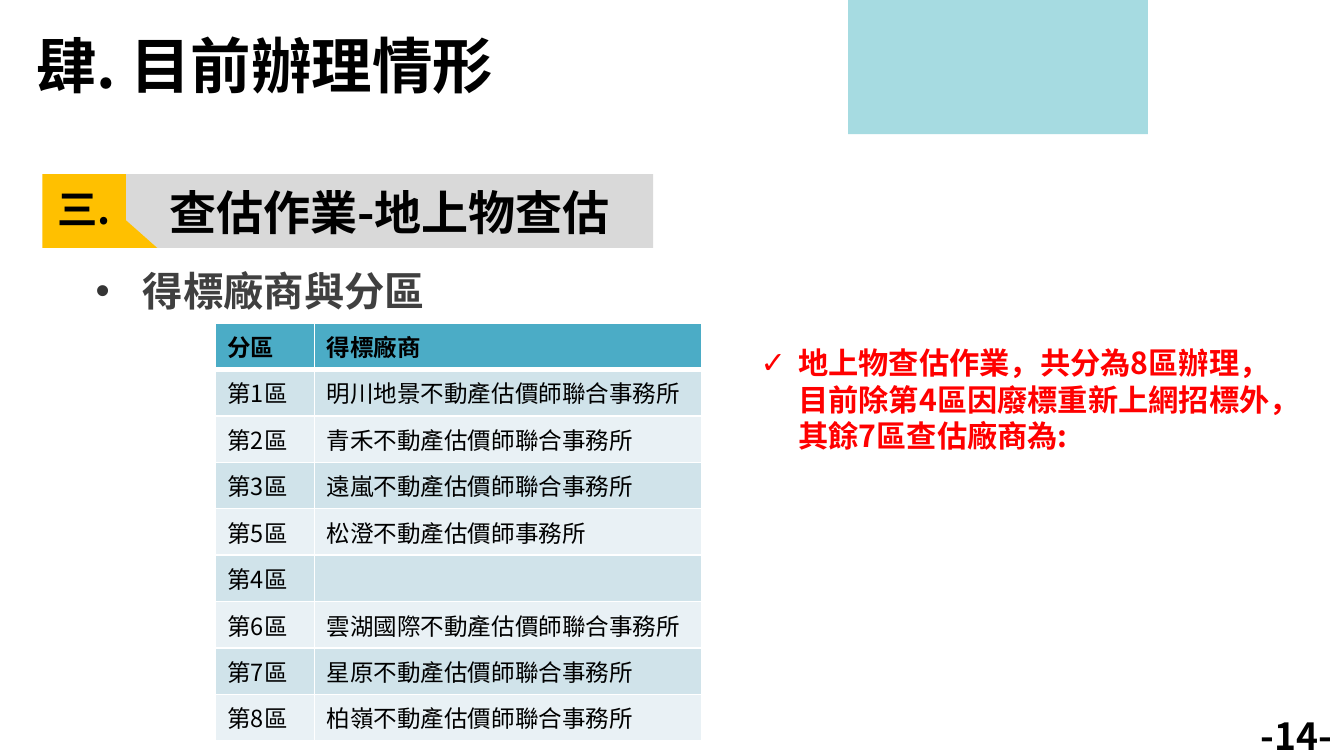
from lxml.etree import SubElement
from pptx import Presentation
from pptx.dml.color import RGBColor
from pptx.enum.shapes import MSO_SHAPE
from pptx.enum.text import MSO_ANCHOR, MSO_AUTO_SIZE, PP_ALIGN
from pptx.oxml.ns import qn
from pptx.util import Inches, Pt

RECT = MSO_SHAPE.RECTANGLE
TOP, MIDDLE = MSO_ANCHOR.TOP, MSO_ANCHOR.MIDDLE
LEFT, CENTER, RIGHT = PP_ALIGN.LEFT, PP_ALIGN.CENTER, PP_ALIGN.RIGHT
FIXED = MSO_AUTO_SIZE.NONE
FONT = "Noto Sans CJK SC"

TITLE = "肆. 目前辦理情形"
NUMBER = "三."
HEADING = "查估作業-地上物查估"
TOPIC = "得標廠商與分區"
NOTE = "地上物查估作業，共分為8區辦理，目前除第4區因廢標重新上網招標外，其餘7區查估廠商為:"
PAGE = "-14-"
ROWS = [
    ("分區", "得標廠商"),
    ("第1區", "明川地景不動產估價師聯合事務所"),
    ("第2區", "青禾不動產估價師聯合事務所"),
    ("第3區", "遠嵐不動產估價師聯合事務所"),
    ("第5區", "松澄不動產估價師事務所"),
    ("第4區", ""),
    ("第6區", "雲湖國際不動產估價師聯合事務所"),
    ("第7區", "星原不動產估價師聯合事務所"),
    ("第8區", "柏嶺不動產估價師聯合事務所"),
]
COLS = [0.82, 3.2]
HIGH, LOW, LOW_ROW = 0.38, 0.35, 3
HEAD, BANDS = "4BACC6", ("E9F1F5", "D0E3EA")
GREY_BAR = [(1.04, 1.44), (5.4, 1.44), (5.4, 2.05), (1.22, 2.05), (1.04, 1.82)]
GOLD_TAG = [(0.35, 1.44), (1.04, 1.44), (1.04, 1.82), (1.3, 2.05), (0.35, 2.05)]


def color(code):
    return RGBColor.from_string(code)


def paint(shape, code):
    shape.fill.solid()
    shape.fill.fore_color.rgb = color(code)
    shape.line.fill.background()
    shape.shadow.inherit = False


def style(para, size, code="000000", bold=True, align=LEFT):
    para.alignment = align
    font = para.font
    font.name, font.size, font.bold = FONT, Pt(size), bold
    font.color.rgb = color(code)
    base = para._p.pPr.find(qn("a:defRPr"))
    SubElement(base, qn("a:ea"), typeface=FONT)


def bullet(para, char, indent, code):
    props = para._p.get_or_add_pPr()
    props.set("marL", str(Inches(indent)))
    props.set("indent", str(-Inches(indent)))
    tint = SubElement(props, qn("a:buClr"))
    SubElement(tint, qn("a:srgbClr"), val=code)
    SubElement(props, qn("a:buFont"), typeface="Arial")
    SubElement(props, qn("a:buChar"), char=char)


def place(shape, box, text, anchor=TOP, wrap=True):
    """Move a text shape, fill it and return its paragraph."""
    shape.left, shape.top, shape.width, shape.height = map(Inches, box)
    frame = shape.text_frame
    frame.text = text
    frame.word_wrap, frame.auto_size = wrap, FIXED
    frame.vertical_anchor = anchor
    para = frame.paragraphs[0]
    para.space_before = Pt(0)
    return para


def label(slide, box, text, anchor=TOP, wrap=True):
    shape = slide.shapes.add_textbox(0, 0, 0, 0)
    return place(shape, box, text, anchor, wrap)


def outline(slide, points, code):
    spots = [(Inches(x), Inches(y)) for x, y in points]
    build = slide.shapes.build_freeform(*spots[0])
    build.add_line_segments(spots[1:], close=True)
    paint(build.convert_to_shape(), code)


def border(cell, bottom):
    props = cell._tc.get_or_add_tcPr()
    sides = {"lnL": 1, "lnR": 1, "lnT": 1, "lnB": bottom}
    for spot, (side, width) in enumerate(sides.items()):
        line = SubElement(props, qn("a:" + side), w=str(Pt(width)))
        fill = SubElement(line, qn("a:solidFill"))
        SubElement(fill, qn("a:srgbClr"), val="FFFFFF")
        props.insert(spot, line)


def add_firms(slide):
    heights = [LOW if i == LOW_ROW else HIGH for i in range(len(ROWS))]
    frame = slide.shapes.add_table(
        len(ROWS), len(COLS), Inches(1.78), Inches(2.67),
        Inches(sum(COLS)), Inches(sum(heights)))
    table = frame.table
    for col, width in zip(table.columns, COLS):
        col.width = Inches(width)
    for i, row in enumerate(ROWS):
        table.rows[i].height = Inches(heights[i])
        for j, text in enumerate(row):
            cell = table.cell(i, j)
            cell.text = text
            cell.fill.solid()
            cell.fill.fore_color.rgb = color(BANDS[i % 2] if i else HEAD)
            border(cell, 1 if i else 3)
            style(cell.text_frame.paragraphs[0], 14, bold=i == 0)


def main():
    deck = Presentation()
    deck.slide_width, deck.slide_height = Inches(11.11), Inches(6.25)
    slide = deck.slides.add_slide(deck.slide_layouts[1])
    title, body = slide.placeholders

    style(label(slide, (8.78, 5.85, 2.33, 0.4), PAGE), 22.2, align=RIGHT)
    style(place(title, (0.2, 0.18, 4.76, 0.71), TITLE, wrap=False), 36)

    outline(slide, GREY_BAR, "D9D9D9")
    outline(slide, GOLD_TAG, "FFC000")
    style(label(slide, (1.3, 1.47, 5.71, 0.57), HEADING), 28)
    style(label(slide, (0.37, 1.48, 0.65, 0.49), NUMBER, MIDDLE, False),
          24, align=CENTER)

    block = slide.shapes.add_shape(
        RECT, Inches(7.01), Inches(-0.01), Inches(2.48), Inches(1.12))
    paint(block, "A6DBE1")

    note = label(slide, (6.19, 2.8, 4.57, 1.01), NOTE)
    bullet(note, "✓", 0.31, "FF0000")
    style(note, 18, "FF0000")

    add_firms(slide)

    topic = place(body, (0.69, 2.15, 3.23, 0.5), TOPIC)
    bullet(topic, "•", 0.39, "353535")
    style(topic, 24, "404040")

    deck.save("out.pptx")


if __name__ == "__main__":
    main()
